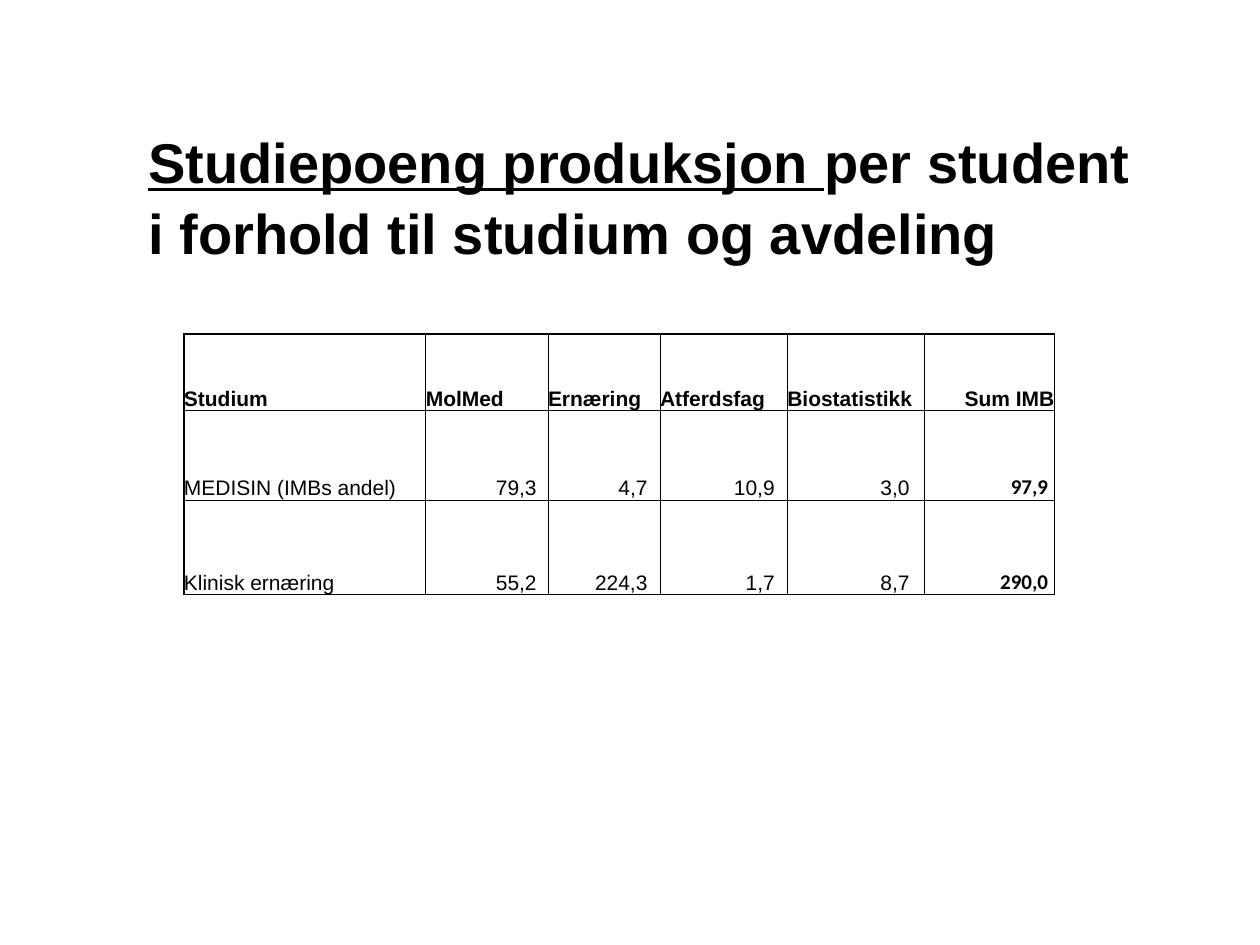
from lxml import etree
from pptx import Presentation
from pptx.dml.color import RGBColor
from pptx.enum.text import MSO_ANCHOR, PP_ALIGN
from pptx.oxml.ns import qn
from pptx.util import Inches, Pt

LEFT, RIGHT = PP_ALIGN.LEFT, PP_ALIGN.RIGHT
MIDDLE, BOTTOM = MSO_ANCHOR.MIDDLE, MSO_ANCHOR.BOTTOM
COLORS = {"text": "000000", "border": "000000"}
SLIDE_W, SLIDE_H = 10, 7.5
TITLE_BOX = (1.08, 0.92, 8.42, 1.25)
TABLE_BOX = (1.46, 2.65, 6.91, 2.07)
COL_W = [1.92, 0.97, 0.89, 1.01, 1.09, 1.03]
ROW_H = [0.61, 0.71, 0.75]
NUMBER_INSET = [0, 0.09, 0.1, 0.1, 0.12, 0.05]
OUTER, INNER = 1, 0.5  # border widths in points
ROWS = [
    ["Studium", "MolMed", "Ernæring", "Atferdsfag", "Biostatistikk", "Sum IMB"],
    ["MEDISIN (IMBs andel)", "79,3", "4,7", "10,9", "3,0", "97,9"],
    ["Klinisk ernæring", "55,2", "224,3", "1,7", "8,7", "290,0"],
]


def add_text(p, text, size=12, font="Arial", bold=False, underline=False, align=LEFT):
    p.alignment = align
    r = p.add_run()
    r.text = text
    f = r.font
    f.size, f.name, f.bold, f.underline = Pt(size), font, bold, underline
    f.color.rgb = RGBColor.from_string(COLORS["text"])


def set_borders(cell, widths):
    tcPr = cell._tc.get_or_add_tcPr()
    for i, (side, width) in enumerate(widths.items()):
        ln = etree.Element(qn(f"a:ln{side}"), w=str(Pt(width)))
        fill = etree.SubElement(ln, qn("a:solidFill"))
        etree.SubElement(fill, qn("a:srgbClr"), val=COLORS["border"])
        tcPr.insert(i, ln)


def add_title(slide, box):
    sp = slide.shapes.add_textbox(*map(Inches, box))
    tf = sp.text_frame
    tf.word_wrap = True
    tf.vertical_anchor = MIDDLE
    p = tf.paragraphs[0]
    p.line_spacing = 1.05
    add_text(p, "Studiepoeng produksjon ", size=32, bold=True, underline=True)
    add_text(p, "per student", size=32, bold=True)
    p.add_line_break()
    add_text(p, "i forhold til studium og avdeling", size=32, bold=True)


def add_credit_table(slide, box):
    n_rows, n_cols = len(ROWS), len(COL_W)
    table = slide.shapes.add_table(n_rows, n_cols, *map(Inches, box)).table
    table.first_row = table.horz_banding = False
    # Column and row sizes as shares of the box
    for col, w in zip(table.columns, COL_W):
        col.width = Inches(box[2] * w / sum(COL_W))
    for row, h in zip(table.rows, ROW_H):
        row.height = Inches(box[3] * h / sum(ROW_H))

    for i, values in enumerate(ROWS):
        for j, value in enumerate(values):
            cell = table.cell(i, j)
            header, total = i == 0, j == n_cols - 1
            number = not header and j > 0
            cell.fill.background()
            cell.vertical_anchor = BOTTOM
            cell.margin_left = cell.margin_top = cell.margin_bottom = 0
            cell.margin_right = Inches(NUMBER_INSET[j] if number else 0)
            add_text(cell.text_frame.paragraphs[0], value,
                     font="Calibri" if number and total else "Arial",
                     bold=header or total,
                     align=RIGHT if number or total else LEFT)
            # Heavier line around the outside of the table
            set_borders(cell, {
                "L": OUTER if j == 0 else INNER,
                "R": OUTER if total else INNER,
                "T": OUTER if header else INNER,
                "B": OUTER if i == n_rows - 1 else INNER,
            })


def main():
    prs = Presentation()
    prs.slide_width, prs.slide_height = Inches(SLIDE_W), Inches(SLIDE_H)
    slide = prs.slides.add_slide(prs.slide_layouts[6])
    add_title(slide, TITLE_BOX)
    add_credit_table(slide, TABLE_BOX)
    prs.save("out.pptx")


if __name__ == "__main__":
    main()
